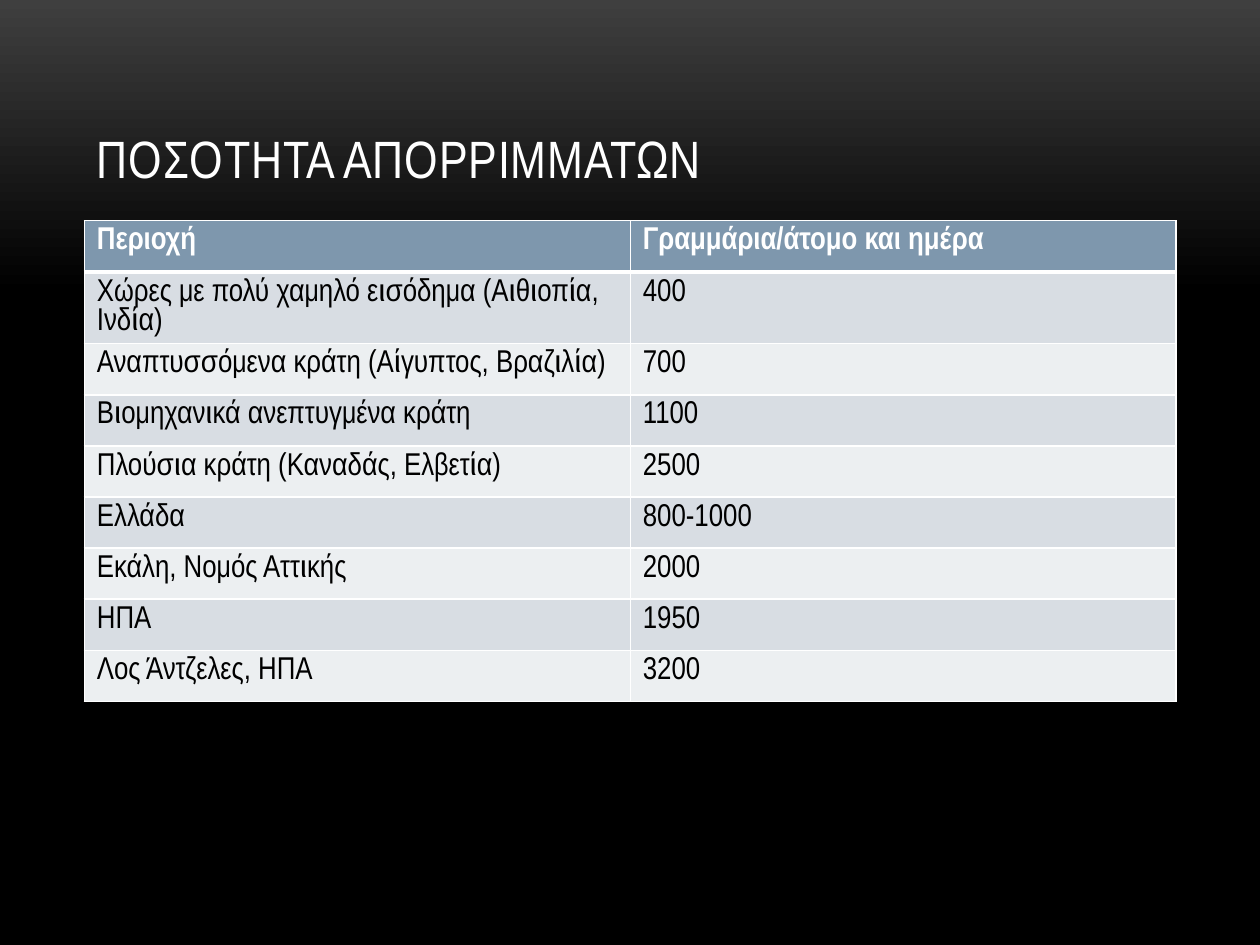
import copy
from dataclasses import dataclass

import pptx
import pptx.util
import pptx.dml.color
import pptx.enum.text
import pptx.oxml.ns
from lxml import etree

Cm, Pt = pptx.util.Cm, pptx.util.Pt
qn = pptx.oxml.ns.qn


@dataclass(frozen=True)
class Theme:
    font: str = "Arial Narrow"
    title_size: int = 30
    table_size: int = 18
    white: str = "FFFFFF"
    black: str = "000000"
    glow: str = "3F3F3F"
    header: str = "7E97AD"
    bands: tuple = ("D8DDE3", "ECEFF1")
    thin: int = 1
    thick: int = 3


THEME = Theme()
TITLE_BOX = (1.7, 0.76, 22.01, 3.18)
TABLE_BOX = (1.7, 4.45, 22.01, 9.27)
WASTE_ROWS = [
    ("Περιοχή", "Γραμμάρια/άτομο και ημέρα"),
    ("Χώρες με πολύ χαμηλό εισόδημα (Αιθιοπία, Ινδία)", "400"),
    ("Αναπτυσσόμενα κράτη (Αίγυπτος, Βραζιλία)", "700"),
    ("Βιομηχανικά ανεπτυγμένα κράτη", "1100"),
    ("Πλούσια κράτη (Καναδάς, Ελβετία)", "2500"),
    ("Ελλάδα", "800-1000"),
    ("Εκάλη, Νομός Αττικής", "2000"),
    ("ΗΠΑ", "1950"),
    ("Λος Άντζελες, ΗΠΑ", "3200"),
]


def rgb(value):
    return pptx.dml.color.RGBColor.from_string(value)


def write_text(frame, text, color, **formats):
    para = frame.paragraphs[0]
    span = para.add_run()
    span.text = text
    for name, value in {"name": THEME.font, **formats}.items():
        setattr(span.font, name, value)
    span.font.color.rgb = rgb(color)
    return para, span


def paint_background(page):
    fill = page.background.fill
    fill.gradient()
    fill.gradient_angle = 270
    # A third stop keeps the lower part black
    stop_list = page.element.find(".//" + qn("a:gsLst"))
    stop_list.append(copy.deepcopy(stop_list[-1]))
    stops = [(0, THEME.glow), (0.31, THEME.black), (1, THEME.black)]
    for stop, (position, color) in zip(fill.gradient_stops, stops):
        stop.position = position
        stop.color.rgb = rgb(color)


def place_title(page, box, text):
    title = page.shapes.title
    for name, value in zip(("left", "top", "width", "height"), box):
        setattr(title, name, Cm(value))
    frame = title.text_frame
    frame.word_wrap = True
    frame.auto_size = pptx.enum.text.MSO_AUTO_SIZE.NONE
    frame.vertical_anchor = pptx.enum.text.MSO_ANCHOR.BOTTOM
    para, span = write_text(frame, text, THEME.white, size=Pt(THEME.title_size))
    para.alignment = pptx.enum.text.PP_ALIGN.LEFT
    span.font._element.set("spc", "50")


def draw_borders(cell, widths):
    properties = cell._tc.get_or_add_tcPr()
    for side, width in widths.items():
        line = etree.SubElement(properties, qn("a:ln" + side), w=str(Pt(width)))
        fill = etree.SubElement(line, qn("a:solidFill"))
        etree.SubElement(fill, qn("a:srgbClr"), val=THEME.white)


def place_table(page, box, rows):
    left, top, width, height = map(Cm, box)
    table = page.shapes.add_table(
        len(rows), len(rows[0]), left, top, width, height).table
    for row_index, texts in enumerate(rows):
        is_header = row_index == 0
        color = THEME.white if is_header else THEME.black
        band = THEME.header if is_header else THEME.bands[(row_index - 1) % 2]
        # The heavy rule lies between the header and the first row
        widths = {
            "L": THEME.thin,
            "R": THEME.thin,
            "T": THEME.thick if row_index == 1 else THEME.thin,
            "B": THEME.thick if is_header else THEME.thin,
        }
        for column_index, text in enumerate(texts):
            cell = table.cell(row_index, column_index)
            draw_borders(cell, widths)
            cell.fill.solid()
            cell.fill.fore_color.rgb = rgb(band)
            write_text(cell.text_frame, text, color,
                       size=Pt(THEME.table_size), bold=is_header)


def main():
    deck = pptx.Presentation()
    deck.slide_width, deck.slide_height = Cm(25.4), Cm(19.05)
    page = deck.slides.add_slide(deck.slide_layouts.get_by_name("Title Only"))
    paint_background(page)
    place_title(page, TITLE_BOX, "ΠΟΣΟΤΗΤΑ ΑΠΟΡΡΙΜΜΑΤΩΝ")
    place_table(page, TABLE_BOX, WASTE_ROWS)
    deck.save("out.pptx")


if __name__ == "__main__":
    main()
